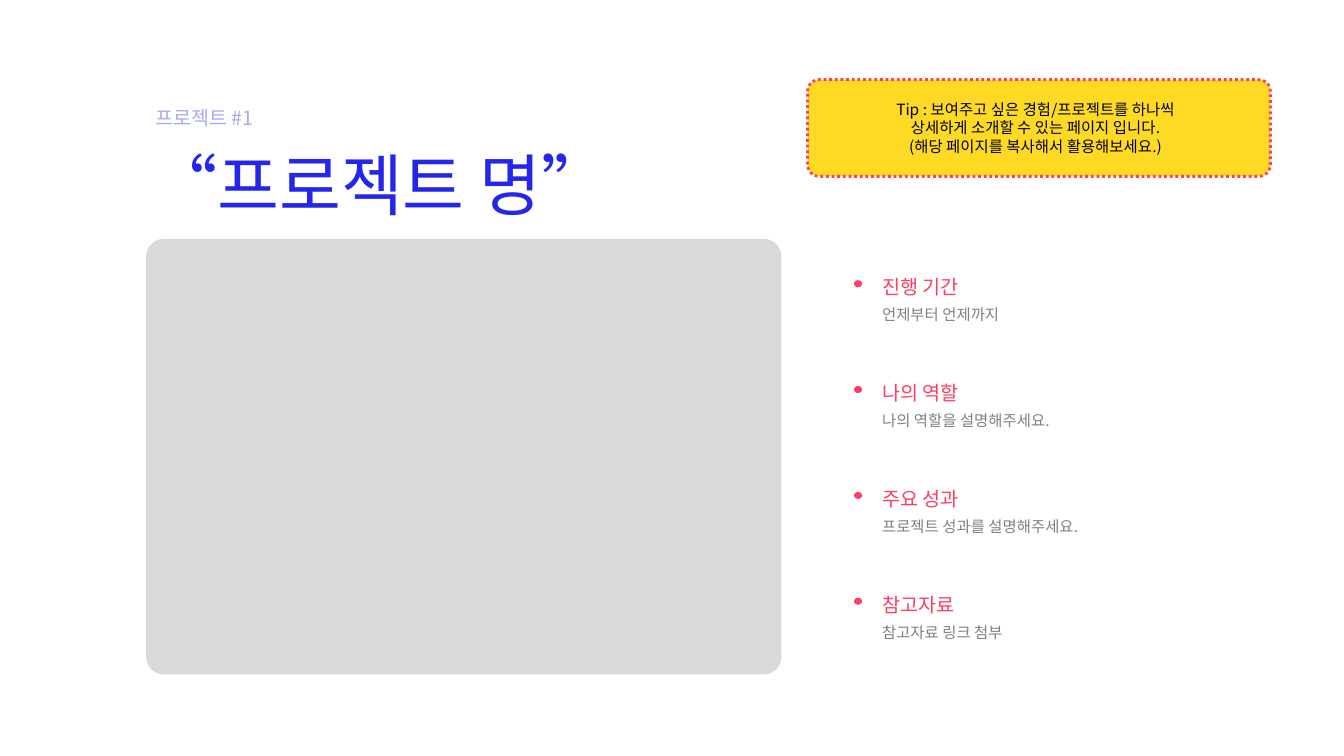
from lxml.etree import SubElement
from pptx import Presentation
from pptx.dml.color import RGBColor
from pptx.enum.dml import MSO_LINE
from pptx.enum.shapes import MSO_SHAPE as Shape
from pptx.enum.text import MSO_ANCHOR as Anchor, MSO_AUTO_SIZE as AutoSize, PP_ALIGN as Align
from pptx.oxml.ns import qn
from pptx.util import Pt

PX = 9144  # EMU per px, 100 px to the inch
FONT = "Noto Sans CJK KR"
WHITE = RGBColor(0xFF, 0xFF, 0xFF)
BLACK = RGBColor(0, 0, 0)
BLUE = RGBColor(0x24, 0x26, 0xEA)
GREY = RGBColor(0x80, 0x80, 0x80)
LIGHT_GREY = RGBColor(0xD9, 0xD9, 0xD9)
PINK = RGBColor(0xFF, 0x3D, 0x62)
DOT_PINK = RGBColor(0xFF, 0x3C, 0x64)
YELLOW = RGBColor(0xFE, 0xD5, 0x01)

DETAILS = [
    ("진행 기간", "언제부터 언제까지"),
    ("나의 역할", "나의 역할을 설명해주세요."),
    ("주요 성과", "프로젝트 성과를 설명해주세요."),
    ("참고자료", "참고자료 링크 첨부"),
]
TIP = [
    "Tip : 보여주고 싶은 경험/프로젝트를 하나씩",
    "상세하게 소개할 수 있는 페이지 입니다.",
    "(해당 페이지를 복사해서 활용해보세요.)",
]


def emu(*lengths):
    return [length * PX for length in lengths]


def set_opacity(fill, percent):
    color = next(fill._xPr.iter(qn("a:srgbClr")))
    SubElement(color, qn("a:alpha")).set("val", str(percent * 1000))


def write(box, lines, size, color, align=Align.LEFT, anchor=Anchor.TOP, opacity=100):
    frame = box.text_frame
    frame.word_wrap = True
    frame.auto_size = AutoSize.SHAPE_TO_FIT_TEXT
    frame.vertical_anchor = anchor
    frame.text = "\n".join(lines)
    for paragraph in frame.paragraphs:
        paragraph.alignment = align
        font = paragraph.runs[0].font
        font.size, font.name = Pt(size), FONT
        font.color.rgb = color
        SubElement(font._element, qn("a:ea")).set("typeface", FONT)
        if opacity < 100:
            set_opacity(font.fill, opacity)


def add_text(shapes, box, lines, **style):
    write(shapes.add_textbox(*emu(*box)), lines, **style)


def add_filled(shapes, kind, box, color):
    shape = shapes.add_shape(kind, *emu(*box))
    shape.shadow.inherit = False
    shape.fill.solid()
    shape.fill.fore_color.rgb = color
    shape.line.fill.background()
    return shape


def add_heading(slide, left, top):
    title = slide.shapes.title
    title.left, title.top, title.width, title.height = emu(left, top + 37, 520, 91)
    write(title, ["“프로젝트 명”"], size=48, color=BLUE)
    add_text(slide.shapes, (left + 5, top, 444, 34), ["프로젝트 #1"],
             size=14, color=BLUE, opacity=40)


def add_image_area(slide, box):
    area = add_filled(slide.shapes, Shape.ROUNDED_RECTANGLE, box, LIGHT_GREY)
    area.adjustments[0] = 0.04


def add_details(slide, left, top, pitch):
    for row, (heading, description) in enumerate(DETAILS):
        y = top + row * pitch
        parts = slide.shapes.add_group_shape().shapes
        add_text(parts, (left + 18, y, 144, 31), [heading],
                 size=14, color=PINK, anchor=Anchor.MIDDLE)
        add_filled(parts, Shape.OVAL, (left, y + 9, 8, 7), DOT_PINK)
        add_text(parts, (left + 18, y + 30, 235, 26), [description],
                 size=11, color=GREY, anchor=Anchor.MIDDLE)


def add_tip(slide, left, top, width, height):
    parts = slide.shapes.add_group_shape().shapes
    panel = add_filled(parts, Shape.ROUNDED_RECTANGLE, (left, top, width, height), YELLOW)
    panel.adjustments[0] = 0.12
    set_opacity(panel.fill, 86)
    panel.line.color.rgb = PINK
    panel.line.width = Pt(2)
    panel.line.dash_style = MSO_LINE.ROUND_DOT
    add_text(parts, (left - 8, top + 15, width + 9, 66), TIP,
             size=11, color=BLACK, align=Align.CENTER)


def main():
    deck = Presentation()
    deck.slide_width, deck.slide_height = emu(1333, 750)
    slide = deck.slides.add_slide(deck.slide_layouts[5])
    slide.background.fill.solid()
    slide.background.fill.fore_color.rgb = WHITE
    add_heading(slide, 139, 100)
    add_image_area(slide, (145, 237, 630, 432))
    add_details(slide, 847, 269, pitch=105)
    add_tip(slide, 801, 79, 459, 96)
    deck.save("out.pptx")


if __name__ == "__main__":
    main()
